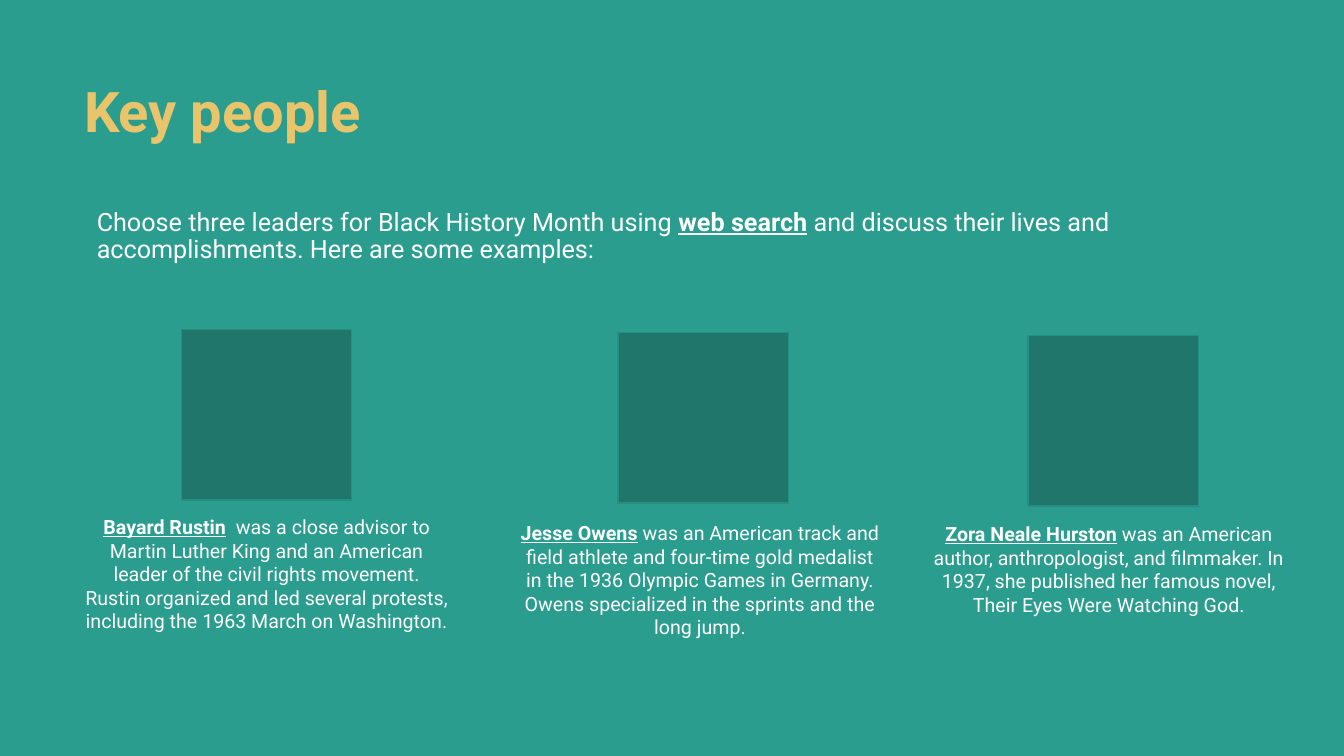
from pptx import Presentation
from pptx.dml.color import RGBColor
from pptx.enum.shapes import MSO_SHAPE
from pptx.enum.text import MSO_ANCHOR, MSO_AUTO_SIZE, PP_ALIGN
from pptx.oxml.xmlchemy import OxmlElement
from pptx.util import Inches, Pt

RECTANGLE = MSO_SHAPE.RECTANGLE
TOP, MIDDLE = MSO_ANCHOR.TOP, MSO_ANCHOR.MIDDLE
LEFT, CENTER = PP_ALIGN.LEFT, PP_ALIGN.CENTER
NO_FIT = MSO_AUTO_SIZE.NONE

COLORS = {
    "background": "2A9D8F",
    "title": "E9C46A",
    "text": "FFFFFF",
    "portrait": "20766B",
    "border": "268E82",
}

deck = Presentation()
deck.slide_width, deck.slide_height = Inches(13.333), Inches(7.5)
# One grid column or row is a hundredth of the slide
COLUMN, ROW = deck.slide_width / 100, deck.slide_height / 100


def color(name):
    return RGBColor.from_string(COLORS[name])


def write(box, text, *, at, size, ink="text", align=LEFT, anchor=TOP,
          spacing=1.0, margins=(0, 0, 0, 0)):
    """Place a box and fill it; parts between asterisks become the key words."""
    left, top, width, height = at
    box.left, box.top = int(left * COLUMN), int(top * ROW)
    box.width, box.height = int(width * COLUMN), int(height * ROW)
    frame = box.text_frame
    frame.word_wrap, frame.auto_size, frame.vertical_anchor = True, NO_FIT, anchor
    (frame.margin_left, frame.margin_top,
     frame.margin_right, frame.margin_bottom) = map(Inches, margins)
    para = frame.paragraphs[0]
    properties = para._p.get_or_add_pPr()
    properties.set("marL", "0")
    properties.set("indent", "0")
    properties.append(OxmlElement("a:buNone"))
    para.alignment, para.line_spacing, para.space_before = align, spacing, Pt(0)
    for index, part in enumerate(text.split("*")):
        if part:
            span = para.add_run()
            span.text = part
            span.font.name, span.font.size = "Roboto", Pt(size)
            span.font.color.rgb = color(ink)
            span.font.bold = index % 2 == 1 or ink == "title"
            span.font.underline = index % 2 == 1


page = deck.slides.add_slide(deck.slide_layouts[1])
page.background.fill.solid()
page.background.fill.fore_color.rgb = color("background")

# Title and introduction
write(page.shapes.title, "Key people", at=(6.25, 10.4, 87.5, 9.47), size=40,
      ink="title", anchor=MIDDLE, spacing=0.9, margins=(0, 0.05, 0.1, 0.05))
write(page.placeholders[1],
      "Choose three leaders for Black History Month using *web search* and discuss "
      "their lives and accomplishments. Here are some examples:",
      at=(7.2, 27.73, 86.55, 16.27), size=18, spacing=0.9)

# People: portrait left, text left, text top, text width, text
PEOPLE = [
    (13.5, 6.23, 68.13, 27.23,
     "*Bayard Rustin*  was a close advisor to Martin Luther King and an American "
     "leader of the civil rights movement. Rustin organized and led several "
     "protests, including the 1963 March on Washington."),
    (45.98, 38.4, 68.93, 27.38,
     "*Jesse Owens* was an American track and field athlete and four-time gold "
     "medalist in the 1936 Olympic Games in Germany. Owens specialized in the "
     "sprints and the long jump."),
    (76.5, 69.08, 69.07, 26.85,
     "*Zora Neale Hurston* was an American author, anthropologist, and filmmaker. "
     "In 1937, she published her famous novel, Their Eyes Were Watching God."),
]
SIDE = Inches(1.69)
PORTRAIT_TOP, PORTRAIT_STEP = 43.6, 0.4

for number, (portrait_left, left, top, width, text) in enumerate(PEOPLE):
    portrait_top = PORTRAIT_TOP + number * PORTRAIT_STEP
    portrait = page.shapes.add_shape(
        RECTANGLE, int(portrait_left * COLUMN), int(portrait_top * ROW), SIDE, SIDE)
    portrait.shadow.inherit = False
    portrait.fill.solid()
    portrait.fill.fore_color.rgb = color("portrait")
    portrait.line.color.rgb = color("border")
    portrait.line.width = Pt(1)

    write(page.shapes.add_textbox(0, 0, 0, 0), text,
          at=(left, top, width, 17.47), size=14, align=CENTER)

deck.save("out.pptx")
